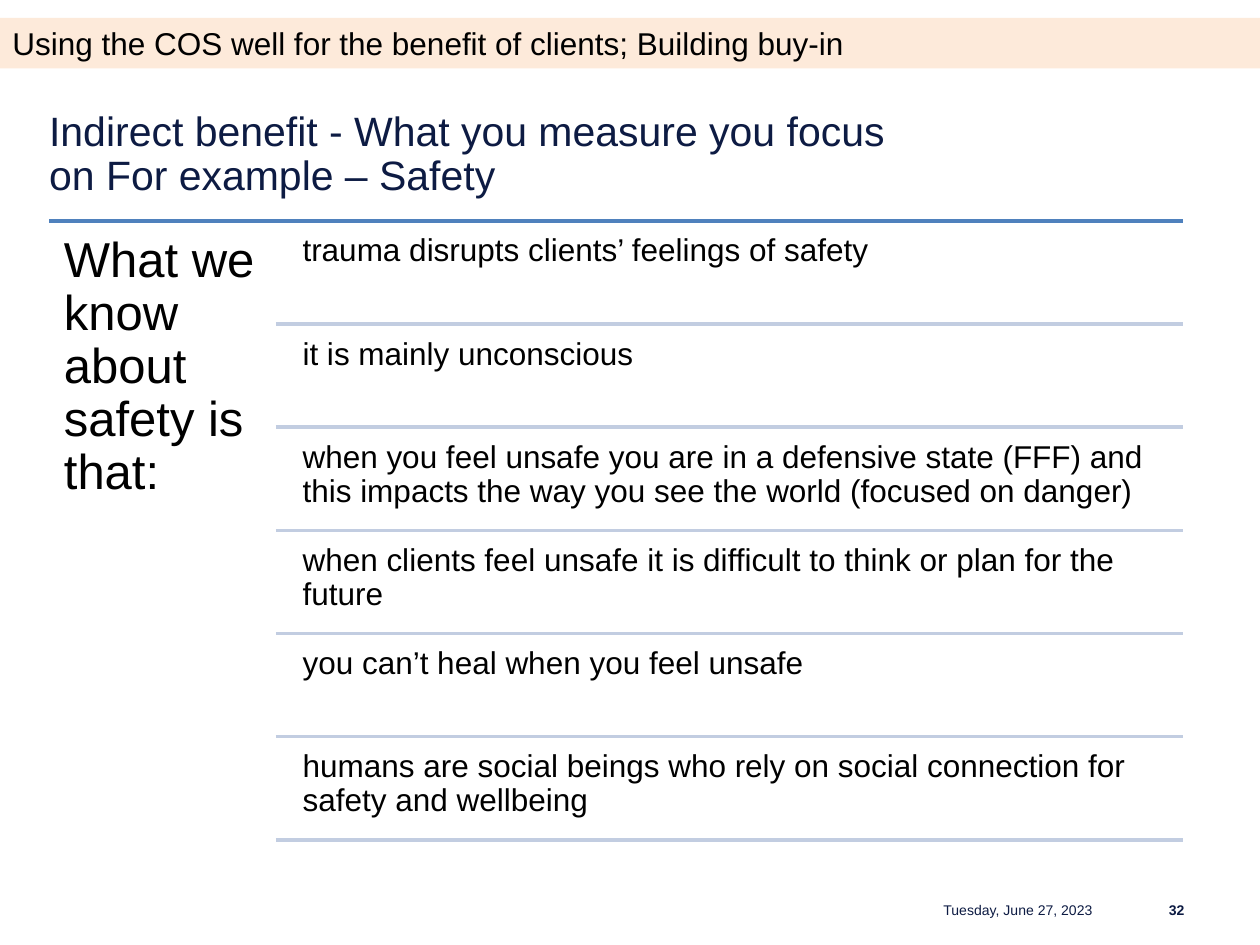
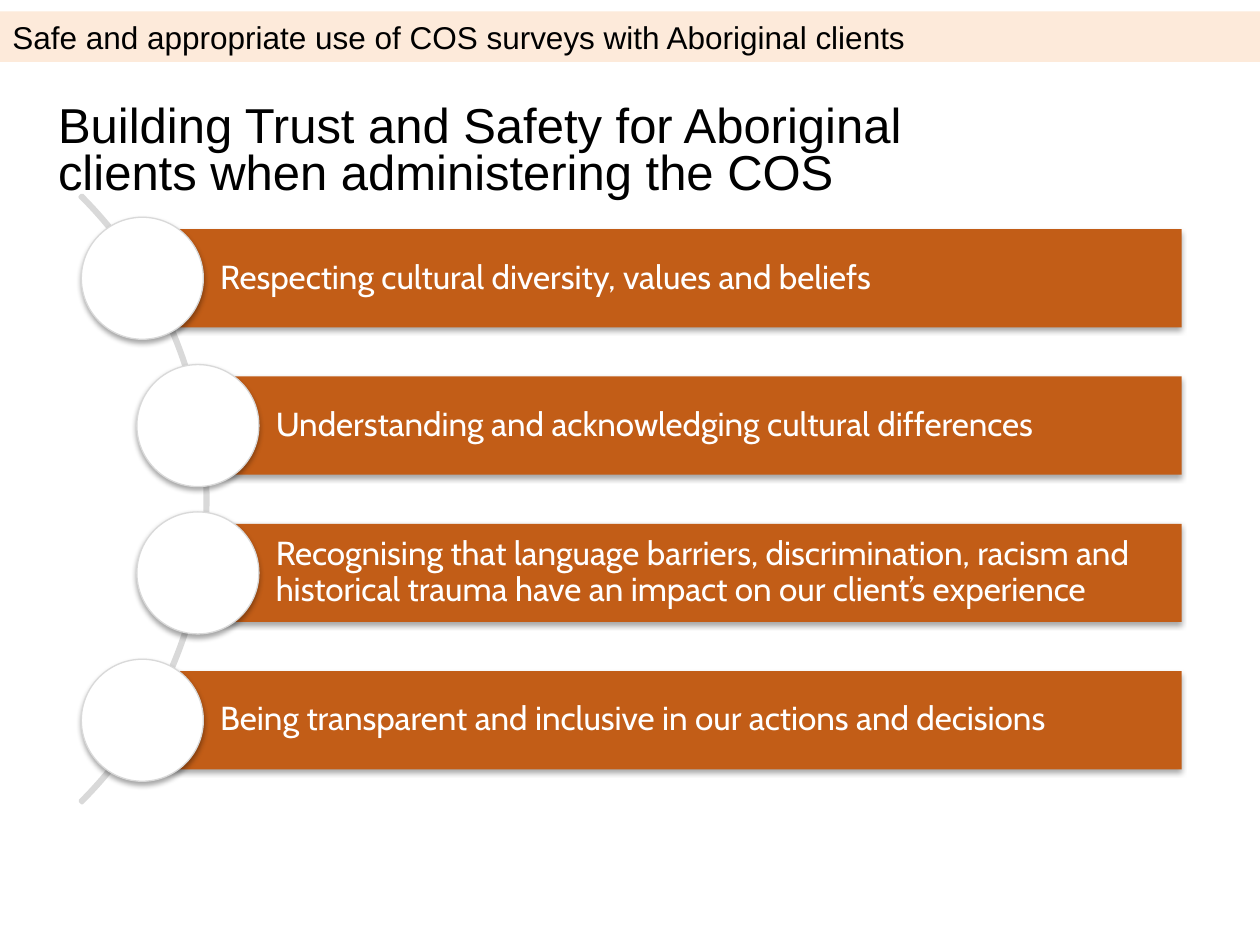
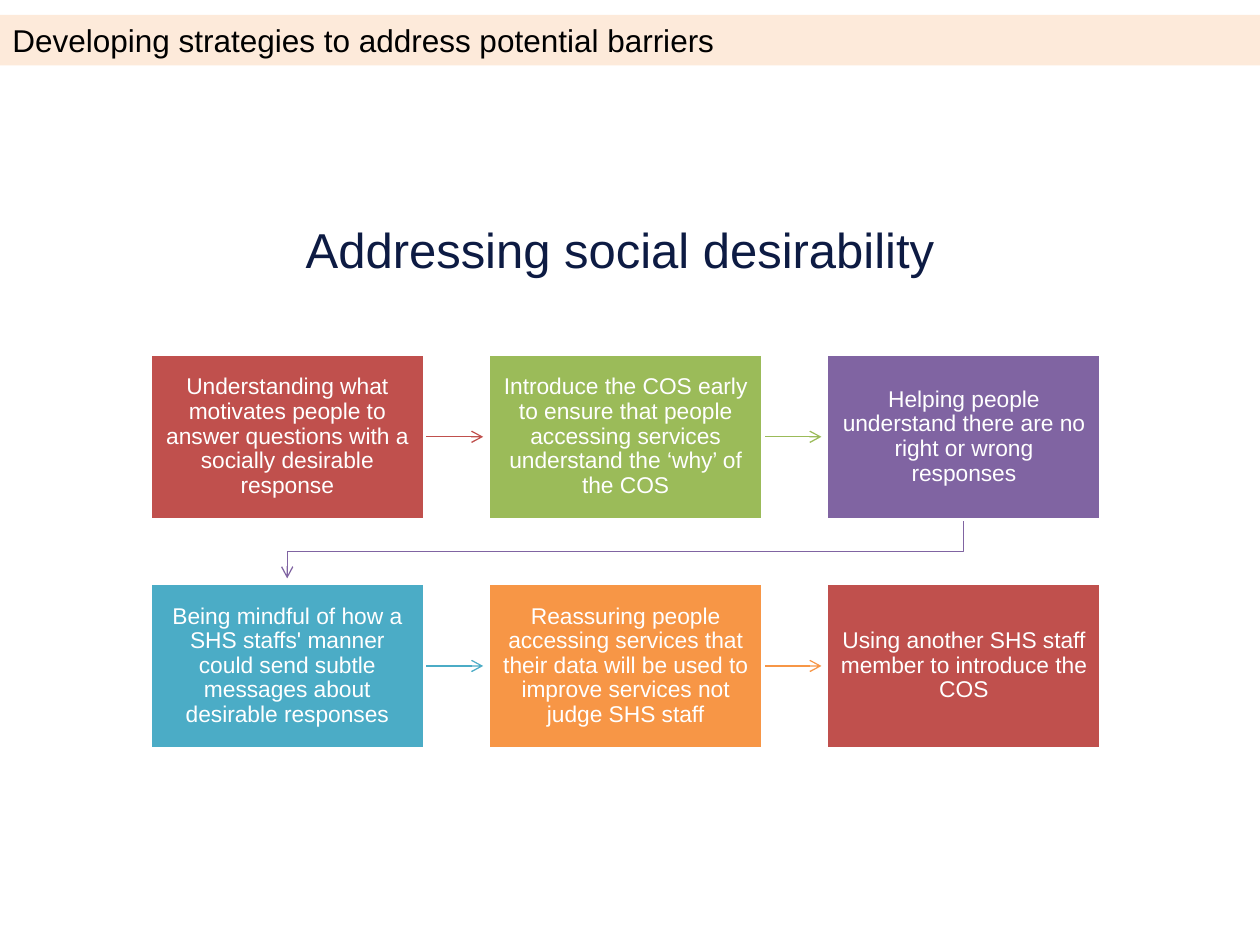
import pptx
import pptx.dml.color
import pptx.enum.shapes
import pptx.enum.text
import pptx.oxml.ns
import pptx.util
from lxml import etree

Cm = pptx.util.Cm
Pt = pptx.util.Pt
RGBColor = pptx.dml.color.RGBColor
Shape = pptx.enum.shapes.MSO_SHAPE
Straight = pptx.enum.shapes.MSO_CONNECTOR.STRAIGHT
Align = pptx.enum.text.PP_ALIGN
Anchor = pptx.enum.text.MSO_ANCHOR
AutoSize = pptx.enum.text.MSO_AUTO_SIZE
qn = pptx.oxml.ns.qn

BLACK = RGBColor(0x00, 0x00, 0x00)
WHITE = RGBColor(0xFF, 0xFF, 0xFF)
NAVY = RGBColor(0x0D, 0x1B, 0x43)
PEACH = RGBColor(0xFD, 0xEA, 0xDA)
BLUE = RGBColor(0x4F, 0x81, 0xBD)
PALE_BLUE = RGBColor(0xC2, 0xCD, 0xE1)
GREY = RGBColor(0xD9, 0xD9, 0xD9)
RUST = RGBColor(0xC2, 0x5D, 0x17)
RED = RGBColor(0xC0, 0x50, 0x4D)
GREEN = RGBColor(0x9B, 0xBB, 0x59)
PURPLE = RGBColor(0x80, 0x64, 0xA2)
TEAL = RGBColor(0x4B, 0xAC, 0xC6)
ORANGE = RGBColor(0xF7, 0x96, 0x46)

SAFETY_BANNER = "Using the COS well for the benefit of clients; Building buy-in"
SAFETY_TITLE = "Indirect benefit - What you measure you focus on For example – Safety"
SAFETY_LEAD = "What we know about safety is that:"
SAFETY_FACTS = [
    "trauma disrupts clients’ feelings of safety",
    "it is mainly unconscious",
    "when you feel unsafe you are in a defensive state (FFF) and this impacts "
    "the way you see the world (focused on danger)",
    "when clients feel unsafe it is difficult to think or plan for the future",
    "you can’t heal when you feel unsafe",
    "humans are social beings who rely on social connection for safety and wellbeing",
]
DATE = "Tuesday, June 27, 2023"
PAGE_NUMBER = "32"

TRUST_BANNER = "Safe and appropriate use of COS surveys with Aboriginal clients"
TRUST_TITLE = "Building Trust and Safety for Aboriginal clients when administering the COS"
TRUST_BARS = [
    (2.87, "Respecting cultural diversity, values and beliefs"),
    (3.99, "Understanding and acknowledging cultural differences"),
    (3.99, "Recognising that language barriers, discrimination, racism and "
           "historical trauma have an impact on our client’s experience"),
    (2.87, "Being transparent and inclusive in our actions and decisions"),
]

BARRIERS_BANNER = "Developing strategies to address potential barriers"
BARRIERS_TITLE = "Addressing social desirability"
STRATEGIES = [
    (RED, "Understanding what motivates people to answer questions with a "
          "socially desirable response"),
    (GREEN, "Introduce the COS early to ensure that people accessing services "
            "understand the ‘why’ of the COS"),
    (PURPLE, "Helping people understand there are no right or wrong responses"),
    (TEAL, "Being mindful of how a SHS staffs' manner could send subtle messages "
           "about desirable responses"),
    (ORANGE, "Reassuring people accessing services that their data will be used to "
             "improve services not judge SHS staff"),
    (RED, "Using another SHS staff member to introduce the COS"),
]


def write(shape, text, size, color, insets=(0.25, 0.13, 0.25, 0.13), align=Align.LEFT,
          anchor=Anchor.TOP, spacing=0.9, font="Arial", bold=False):
    frame = shape.text_frame
    frame.word_wrap = True
    frame.auto_size = AutoSize.NONE
    frame.vertical_anchor = anchor
    frame.margin_left, frame.margin_top, frame.margin_right, frame.margin_bottom = map(Cm, insets)
    para = frame.paragraphs[0]
    para.text = text
    para.alignment = align
    para.line_spacing = spacing
    para.font.name = font
    para.font.size = Pt(size)
    para.font.bold = bold
    para.font.color.rgb = color


def add_text(page, place, text, size, color, **style):
    box = page.shapes.add_textbox(*map(Cm, place))
    write(box, text, size, color, **style)


def add_box(page, kind, place, fill=None, line=None, width=0.75):
    box = page.shapes.add_shape(kind, *map(Cm, place))
    box.shadow.inherit = False
    if fill is None:
        box.fill.background()
    else:
        box.fill.solid()
        box.fill.fore_color.rgb = fill
    if line is None:
        box.line.fill.background()
    else:
        box.line.color.rgb = line
        box.line.width = Pt(width)
    return box


def cast_shadow(shape):
    effects = shape._element.spPr.find(qn("a:effectLst"))
    shadow = etree.SubElement(effects, qn("a:outerShdw"), blurRad=str(Pt(3.1)),
                              dist=str(Pt(1.8)), dir="5400000", rotWithShape="0")
    color = etree.SubElement(shadow, qn("a:srgbClr"), val=str(BLACK))
    etree.SubElement(color, qn("a:alpha"), val="35000")


def add_line(page, start, end, color, width):
    line = page.shapes.add_connector(Straight, *map(Cm, start + end))
    line.line.color.rgb = color
    line.line.width = Pt(width)
    etree.SubElement(line._element.spPr, qn("a:effectLst"))
    return line


def add_arrowhead(shape):
    etree.SubElement(shape.line._get_or_add_ln(), qn("a:tailEnd"), type="arrow")


def add_page(deck, banner, banner_top, title, place, size, color, **style):
    page = deck.slides.add_slide(deck.slide_layouts[5])
    heading = page.shapes.title
    heading.left, heading.top, heading.width, heading.height = map(Cm, place)
    write(heading, title, size, color, **style)
    band = add_box(page, Shape.RECTANGLE, (0, banner_top, 25.4, 1.02), PEACH)
    write(band, banner, 18, BLACK, spacing=1.0)
    band.text_frame.auto_size = AutoSize.SHAPE_TO_FIT_TEXT
    return page


def build_safety(deck):
    page = add_page(deck, SAFETY_BANNER, 0.36, SAFETY_TITLE, (0.99, 2.24, 17.98, 1.68),
                    23.4, NAVY, insets=(0, 0, 0, 0))
    left, right, top = 0.99, 23.85, 4.45
    add_line(page, (left, top), (right, top), BLUE, 2)
    add_text(page, (left, top, 4.57, 12.57), SAFETY_LEAD, 28, BLACK, insets=(0.3,) * 4)
    height, pitch = 1.98, 2.08
    for row, fact in enumerate(SAFETY_FACTS):
        fact_top = top + 0.1 + row * pitch
        add_text(page, (5.92, fact_top, 17.96, height), fact, 18, BLACK, insets=(0.18,) * 4)
        rule = fact_top + height
        add_line(page, (5.56, rule), (right, rule), PALE_BLUE, 2)
    footer = dict(align=Align.RIGHT, anchor=Anchor.MIDDLE)
    add_text(page, (16.36, 18.08, 5.92, 0.58), DATE, 8, NAVY, **footer)
    add_text(page, (22.05, 18.08, 2.08, 0.58), PAGE_NUMBER, 8, NAVY, bold=True, **footer)


def build_trust(deck):
    page = add_page(deck, TRUST_BANNER, 0.23, TRUST_TITLE, (0.69, 2.08, 20.78, 1.96), 28, BLACK,
                    insets=(0.48, 0.48, 0.48, 0), anchor=Anchor.BOTTOM, spacing=0.8)
    arc = add_box(page, Shape.BLOCK_ARC, (-13.13, 1.4, 17.32, 17.32), line=GREY, width=2)
    for index, value in enumerate((189, 27, 0.003)):
        arc.adjustments[index] = value
    right, height, diameter = 23.82, 1.98, 2.46
    for row, (left, text) in enumerate(TRUST_BARS):
        top = 4.62 + row * 2.97
        bar = add_box(page, Shape.RECTANGLE, (left, top, right - left, height), RUST)
        cast_shadow(bar)
        write(bar, text, 19, WHITE, insets=(1.57, 0.13, 0.13, 0.13),
              anchor=Anchor.MIDDLE, font="Cabin")
        circle_place = (left - diameter / 2, top + (height - diameter) / 2, diameter, diameter)
        cast_shadow(add_box(page, Shape.OVAL, circle_place, WHITE, GREY))


def add_bend(page, points, color):
    corners = [(Cm(x), Cm(y)) for x, y in points]
    builder = page.shapes.build_freeform(*corners[0])
    builder.add_line_segments(corners[1:], close=False)
    bend = builder.convert_to_shape()
    bend.shadow.inherit = False
    bend.fill.background()
    bend.line.color.rgb = color
    bend.line.width = Pt(0.75)
    add_arrowhead(bend)


def build_barriers(deck):
    page = add_page(deck, BARRIERS_BANNER, 0.3, BARRIERS_TITLE, (2.97, 4.42, 19.05, 1.8),
                    28, NAVY, insets=(0, 0, 0, 0), align=Align.CENTER, spacing=1.0)
    columns, first_left, first_top = 3, 3.02, 7.14
    width, height, across, down, tip_gap = 5.54, 3.33, 6.82, 4.62, 0.1
    for index, (color, text) in enumerate(STRATEGIES):
        row, column = divmod(index, columns)
        left, top = first_left + column * across, first_top + row * down
        arrow = None
        if column < columns - 1:
            middle = top + height / 2
            arrow = add_line(page, (left + width, middle), (left + across - tip_gap, middle),
                             color, 0.75)
            add_arrowhead(arrow)
        elif index < len(STRATEGIES) - 1:
            start_x, end_x = left + width / 2, first_left + width / 2
            bottom, next_top = top + height, top + down
            turn = (bottom + next_top) / 2
            add_bend(page, [(start_x, bottom), (start_x, turn), (end_x, turn),
                            (end_x, next_top - tip_gap)], color)
        box = add_box(page, Shape.RECTANGLE, (left, top, width, height), color, WHITE, 2)
        write(box, text, 13, WHITE, insets=(0.28,) * 4, align=Align.CENTER, anchor=Anchor.MIDDLE)
        if arrow is not None:
            arrow.begin_connect(box, 3)


def main():
    deck = pptx.Presentation()
    deck.slide_width, deck.slide_height = Cm(25.4), Cm(19.05)
    build_safety(deck)
    build_trust(deck)
    build_barriers(deck)
    deck.save("out.pptx")


if __name__ == "__main__":
    main()
